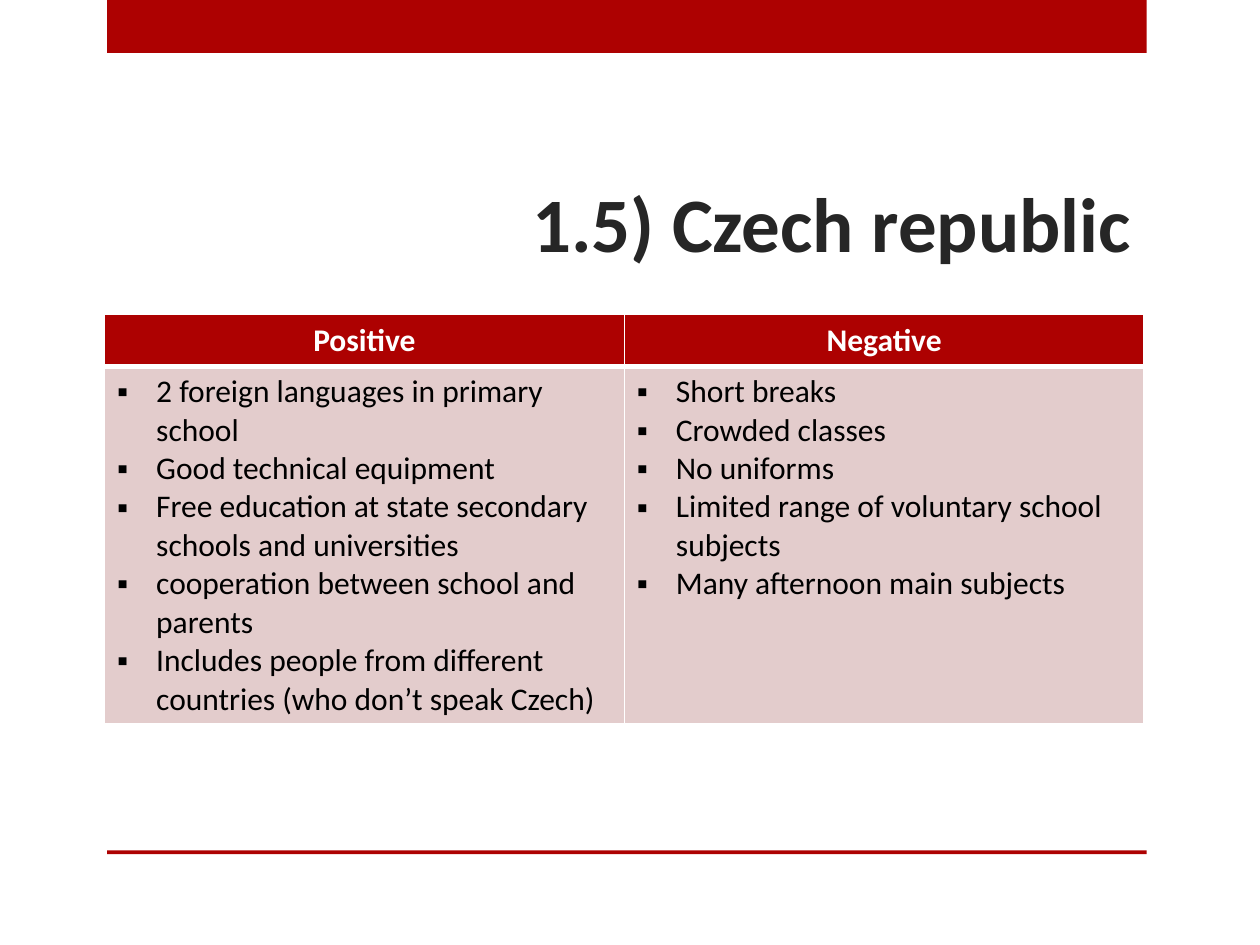
import pptx
import pptx.util
import pptx.dml.color
import pptx.enum.shapes
import pptx.enum.text
import pptx.oxml.ns
import lxml.etree

Pt = pptx.util.Pt
Inches = pptx.util.Inches
RGB = pptx.dml.color.RGBColor
ALIGN = pptx.enum.text.PP_ALIGN

RED = RGB(0xAD, 0x01, 0x01)
PINK = RGB(0xE3, 0xCC, 0xCC)
DARK = RGB(0x26, 0x26, 0x26)
BLACK = RGB(0, 0, 0)
WHITE = RGB(0xFF, 0xFF, 0xFF)
FONT = "Calibri"

WIDE, HIGH = 10, 7.5
LEFT, SPAN = 0.083, 0.825  # shares of the slide's width
INDENT = 0.31

LISTS = {
    "Positive": [
        "2 foreign languages in primary school",
        "Good technical equipment",
        "Free education at state secondary schools and universities",
        "cooperation between school and parents",
        "Includes people from different countries (who don’t speak Czech)",
    ],
    "Negative": [
        "Short breaks",
        "Crowded classes",
        "No uniforms",
        "Limited range of voluntary school subjects",
        "Many afternoon main subjects",
    ],
}


def area(left, top, width, height):
    """Turn shares of the slide's size into lengths."""
    return (Inches(left * WIDE), Inches(top * HIGH),
            Inches(width * WIDE), Inches(height * HIGH))


def add(parent, tag, **attrs):
    node = lxml.etree.SubElement(parent, pptx.oxml.ns.qn(tag))
    for key, value in attrs.items():
        node.set(key, str(value))
    return node


def style(para, size, color, bold, align):
    para.alignment = align
    for run in para.runs:
        font = run.font
        font.name, font.size, font.bold = FONT, Pt(size), bold
        font.color.rgb = color


def bar(slide, box):
    shape = slide.shapes.add_shape(
        pptx.enum.shapes.MSO_SHAPE.RECTANGLE, *box)
    shape.shadow.inherit = False
    shape.fill.solid()
    shape.fill.fore_color.rgb = RED
    shape.line.fill.background()


def title(slide, box, text):
    frame = slide.shapes.add_textbox(*box).text_frame
    frame.word_wrap = True
    frame.vertical_anchor = pptx.enum.text.MSO_ANCHOR.BOTTOM
    frame.text = text
    style(frame.paragraphs[0], 44, DARK, True, ALIGN.RIGHT)


def bullet(para):
    props = para._p.get_or_add_pPr()
    props.set("marL", str(Inches(INDENT)))
    props.set("indent", str(-Inches(INDENT)))
    add(props, "a:buFont", typeface="Arial")
    add(props, "a:buChar", char="▪")


def paint(cell, color, top, bottom):
    """Set white borders, then the fill, as the schema orders them."""
    props = cell._tc.get_or_add_tcPr()
    for side, width in zip("LRTB", (1, 1, top, bottom)):
        line = add(props, "a:ln" + side, w=Pt(width))
        add(add(line, "a:solidFill"), "a:srgbClr", val=WHITE)
    cell.fill.solid()
    cell.fill.fore_color.rgb = color


def table(slide, box, lists):
    grid = slide.shapes.add_table(2, len(lists), *box).table
    grid.rows[0].height = Inches(0.41)
    grid.rows[1].height = box[3] - grid.rows[0].height
    for col, (name, items) in enumerate(lists.items()):
        head, body = grid.cell(0, col), grid.cell(1, col)
        paint(head, RED, 1, 3)
        paint(body, PINK, 3, 1)
        head.text_frame.text = name
        style(head.text_frame.paragraphs[0], 18, WHITE, True, ALIGN.CENTER)
        body.text_frame.text = "\n".join(items)
        for para in body.text_frame.paragraphs:
            style(para, 18, BLACK, False, ALIGN.LEFT)
            bullet(para)


def main():
    deck = pptx.Presentation()
    deck.slide_width, deck.slide_height = Inches(WIDE), Inches(HIGH)
    slide = deck.slides.add_slide(deck.slide_layouts[6])
    bar(slide, area(0.085, 0, SPAN, 0.056))
    bar(slide, area(0.085, 0.9, SPAN, 0.004))
    title(slide, area(LEFT, 0.06, SPAN, 0.23), "1.5) Czech republic")
    table(slide, area(LEFT, 0.333, SPAN, 0.433), LISTS)
    deck.save("out.pptx")


if __name__ == "__main__":
    main()
